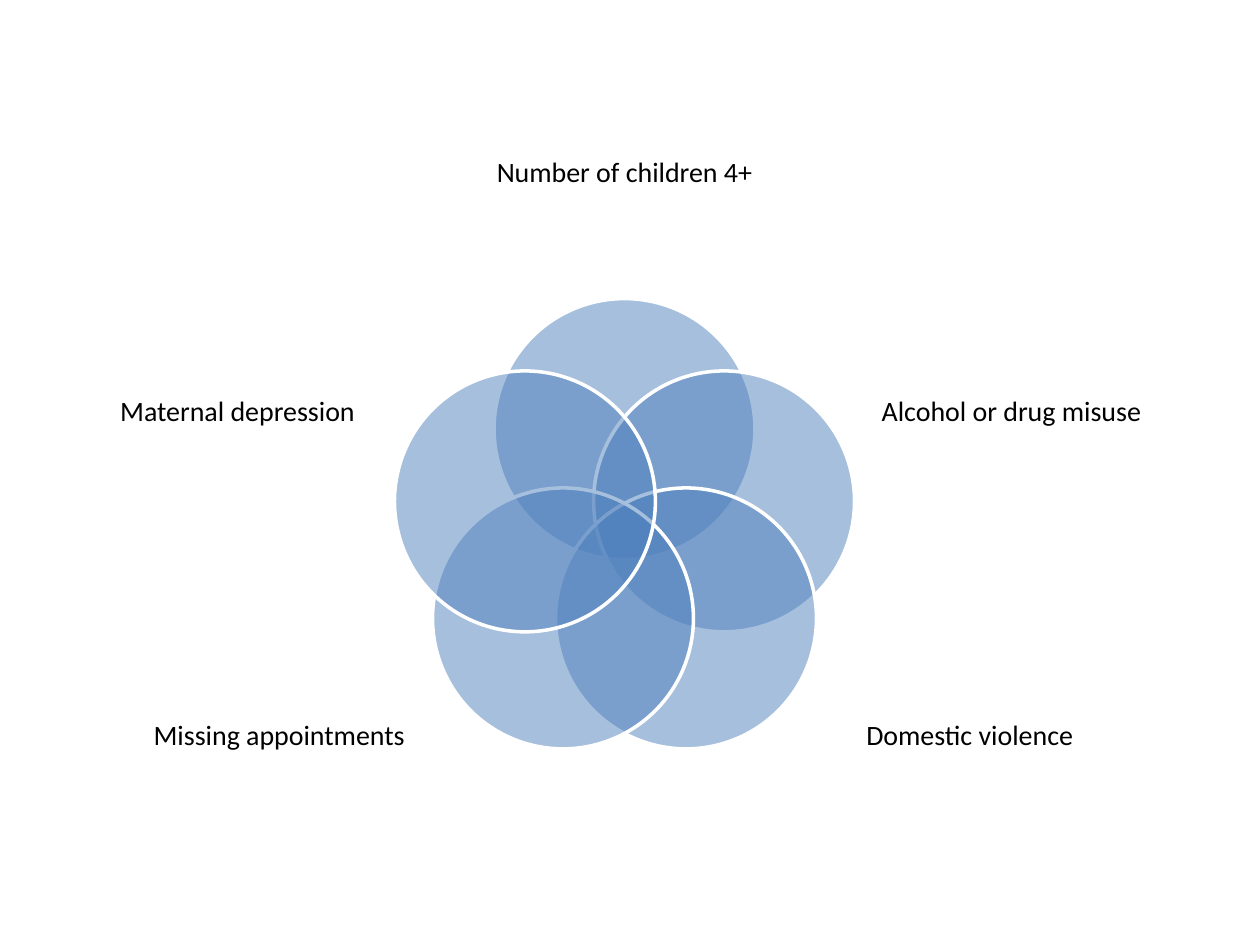
import math

from lxml import etree
from pptx import Presentation
from pptx.dml.color import RGBColor
from pptx.enum import shapes, text
from pptx.oxml.ns import qn
from pptx.util import Cm, Pt

# Risk factors clockwise from the top: label, label centre (x from the axis, y), label size, in cm
SIDE_LABEL = (5.49, 3.84)
FACTORS = [
    ("Number of children 4+", (0, 3.49), (6.12, 3.53)),
    ("Alcohol or drug misuse", (7.8, 8.32), SIDE_LABEL),
    ("Domestic violence", (6.96, 14.85), SIDE_LABEL),
    ("Missing appointments", (-6.96, 14.85), SIDE_LABEL),
    ("Maternal depression", (-7.8, 8.32), SIDE_LABEL),
]
CENTRE_X, CENTRE_Y = 12.59, 10.76
RING_RADIUS = 2.11
DIAMETER = 5.26
BLUE, WHITE, BLACK = "4F81BD", "FFFFFF", "000000"


def set_color(color_format, value):
    color_format.rgb = RGBColor.from_string(value)


def centred_box(x, y, width, height):
    """Return left, top, width and height of a box centred on x, y."""
    return Cm(x - width / 2), Cm(y - height / 2), Cm(width), Cm(height)


def add_circle(group, x, y):
    circle = group.shapes.add_shape(
        shapes.MSO_SHAPE.OVAL, *centred_box(x, y, DIAMETER, DIAMETER))
    circle.shadow.inherit = False
    circle.fill.solid()
    set_color(circle.fill.fore_color, BLUE)
    color = circle.fill._xPr.find(qn("a:solidFill"))[0]
    etree.SubElement(color, qn("a:alpha"), val="50000")
    set_color(circle.line.color, WHITE)
    circle.line.width = Pt(2)


def add_label(group, label, x, y, size):
    frame = group.shapes.add_textbox(*centred_box(x, y, *size)).text_frame
    frame.word_wrap = True
    frame.vertical_anchor = text.MSO_ANCHOR.MIDDLE
    frame.margin_left = frame.margin_right = 0
    frame.margin_top = frame.margin_bottom = 0
    frame.text = label
    paragraph = frame.paragraphs[0]
    paragraph.alignment = text.PP_ALIGN.CENTER
    paragraph.line_spacing = 0.9
    font = paragraph.runs[0].font
    font.name, font.size = "Calibri", Pt(16)
    set_color(font.color, BLACK)


def main():
    presentation = Presentation()
    presentation.slide_width, presentation.slide_height = Cm(25.4), Cm(19.05)
    slide = presentation.slides.add_slide(presentation.slide_layouts[6])
    venn = slide.shapes.add_group_shape()
    for index, (label, (offset, label_y), size) in enumerate(FACTORS):
        angle = 2 * math.pi * index / len(FACTORS)
        add_circle(venn, CENTRE_X + RING_RADIUS * math.sin(angle),
                   CENTRE_Y - RING_RADIUS * math.cos(angle))
        add_label(venn, label, CENTRE_X + offset, label_y, size)
    presentation.save("out.pptx")


if __name__ == "__main__":
    main()
